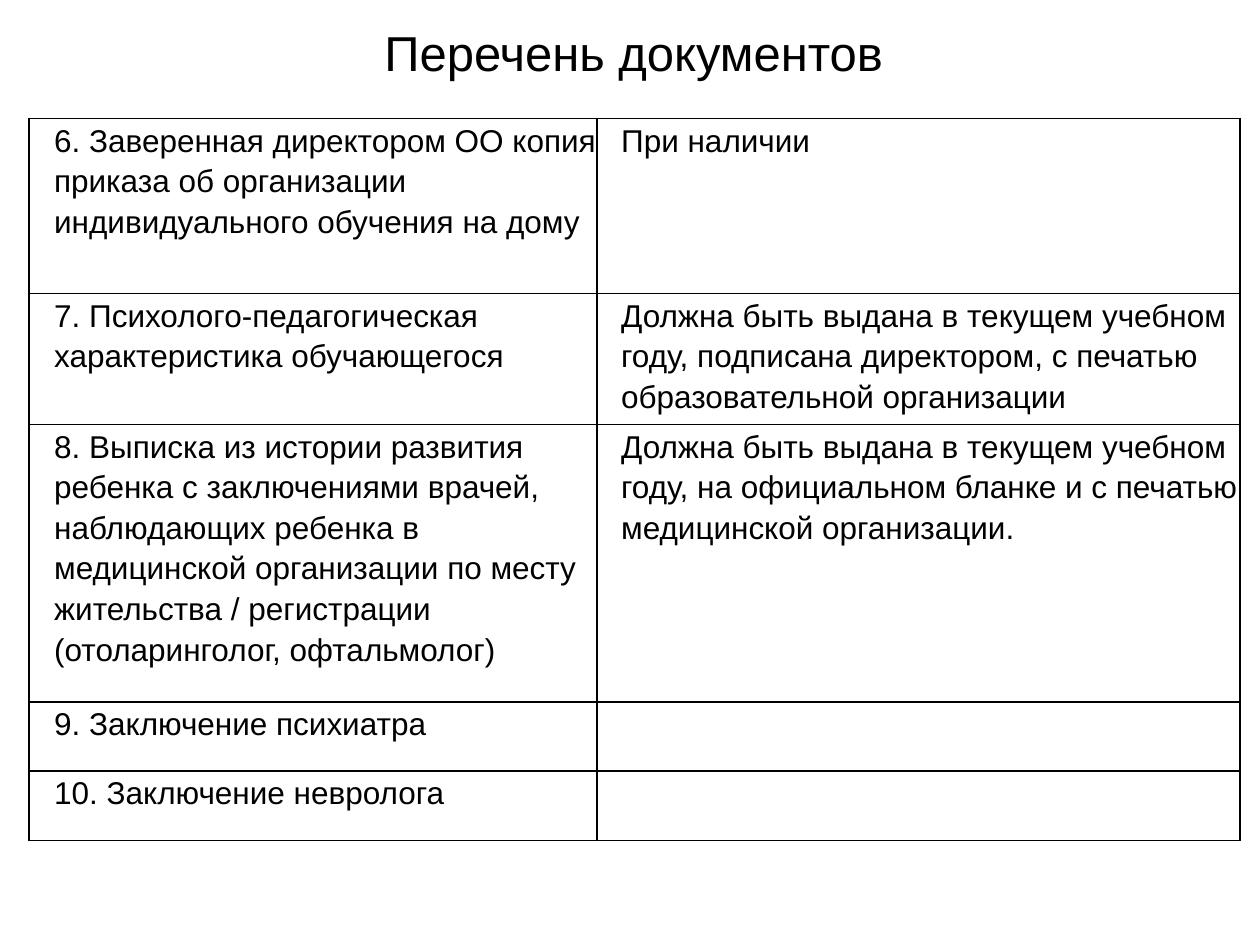
import pptx
import pptx.util
import pptx.dml.color
import pptx.enum.text
import pptx.oxml
from pptx.oxml.ns import qn
from pptx.util import Inches

FONT = "Arial"
BLACK = "000000"
COLS = [4.51, 5.1]
INDENTS = [0.2, 0.19]
# Row height, document, note
ROWS = [
    (1.39, "6. Заверенная директором ОО копия приказа об организации "
           "индивидуального обучения на дому", "При наличии"),
    (1.04, "7. Психолого-педагогическая характеристика обучающегося",
     "Должна быть выдана в текущем учебном году, подписана директором, "
     "с печатью образовательной организации"),
    (2.2, "8. Выписка из истории развития ребенка с заключениями врачей, "
          "наблюдающих ребенка в медицинской организации "
          "по месту жительства / регистрации (отоларинголог, офтальмолог)",
     "Должна быть выдана в текущем учебном году, на официальном бланке "
     "и с печатью медицинской организации."),
    (0.55, "9. Заключение психиатра", ""),
    (0.55, "10. Заключение невролога", ""),
]


def color(code):
    return pptx.dml.color.RGBColor.from_string(code)


def add_run(para, text, size):
    run = para.add_run()
    run.text = text
    run.font.name = FONT
    run.font.size = pptx.util.Pt(size)
    run.font.color.rgb = color(BLACK)


def add_edges(cell):
    """Draw a thin line on each side of the cell."""
    props = cell._tc.get_or_add_tcPr()
    for spot, side in enumerate(("lnL", "lnR", "lnT", "lnB")):
        line = pptx.oxml.parse_xml(
            f'<a:{side} xmlns:a="http://schemas.openxmlformats.org/drawingml/2006/main" '
            f'w="{pptx.util.Pt(1)}"><a:solidFill><a:srgbClr val="{BLACK}"/>'
            f'</a:solidFill></a:{side}>')
        props.insert(spot, line)


def fill_cell(cell, text, indent):
    cell.margin_left = cell.margin_right = 0
    cell.margin_top = cell.margin_bottom = 0
    cell.fill.background()
    add_edges(cell)
    if not text:
        return
    para = cell.text_frame.paragraphs[0]
    para.line_spacing = 1.15
    para.space_before = para.space_after = pptx.util.Pt(7.5)
    props = para._p.get_or_add_pPr()
    props.set("marL", str(Inches(indent)))
    props.set("indent", "0")
    add_run(para, text, 18)


def add_list(slide, left, top, width, height):
    """Table of documents and notes on them."""
    frame = slide.shapes.add_table(
        len(ROWS), len(COLS), Inches(left), Inches(top),
        Inches(width), Inches(height))
    table = frame.table
    table.first_row = table.horz_banding = False
    for col, size in zip(table.columns, COLS):
        col.width = Inches(size)
    for row, (size, *texts) in zip(table.rows, ROWS):
        row.height = Inches(size)
        for cell, text, indent in zip(row.cells, texts, INDENTS):
            fill_cell(cell, text, indent)


def add_title(slide, left, top, width, height):
    box = slide.shapes.add_textbox(
        Inches(left), Inches(top), Inches(width), Inches(height))
    frame = box.text_frame
    frame.word_wrap = True
    frame.auto_size = pptx.enum.text.MSO_AUTO_SIZE.SHAPE_TO_FIT_TEXT
    para = frame.paragraphs[0]
    para.alignment = pptx.enum.text.PP_ALIGN.CENTER
    add_run(para, "Перечень документов", 28)


def main():
    deck = pptx.Presentation()
    deck.slide_width, deck.slide_height = Inches(10), Inches(7.5)
    slide = deck.slides.add_slide(deck.slide_layouts[6])
    add_list(slide, 0.23, 0.94, sum(COLS), sum(row[0] for row in ROWS))
    add_title(slide, 1.41, 0.13, 7.24, 0.57)
    deck.save("out.pptx")


if __name__ == "__main__":
    main()
